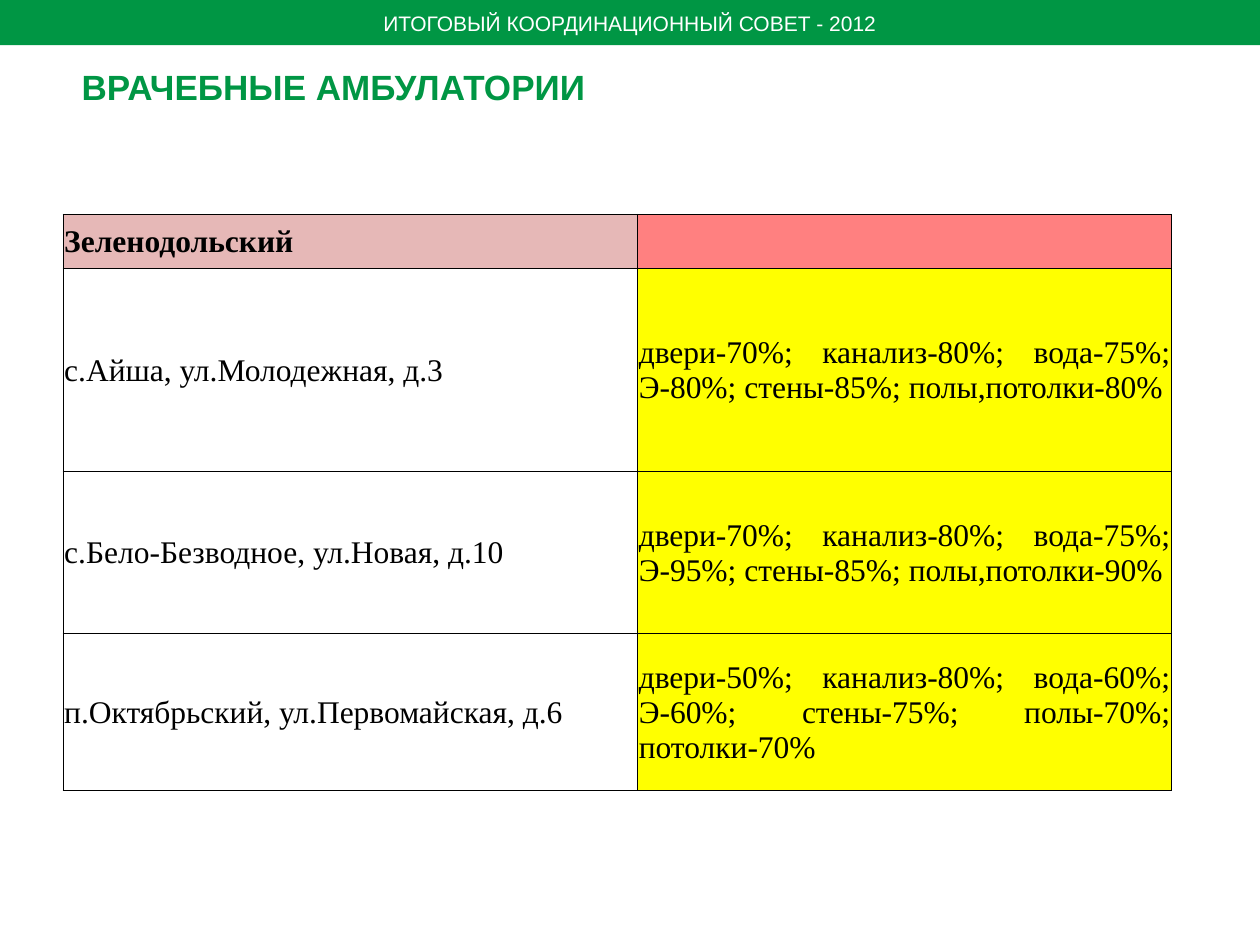
from lxml import etree
from pptx import Presentation
from pptx.dml.color import RGBColor
from pptx.enum.shapes import MSO_SHAPE
from pptx.enum.text import MSO_ANCHOR, PP_ALIGN
from pptx.oxml.ns import qn
from pptx.util import Inches, Pt

RECTANGLE = MSO_SHAPE.RECTANGLE
MIDDLE = MSO_ANCHOR.MIDDLE
CENTER, JUSTIFY, LEFT = PP_ALIGN.CENTER, PP_ALIGN.JUSTIFY, PP_ALIGN.LEFT

BANNER = "ИТОГОВЫЙ КООРДИНАЦИОННЫЙ СОВЕТ - 2012"
HEADING = "ВРАЧЕБНЫЕ АМБУЛАТОРИИ"
CLINICS = [
    ("Зеленодольский", ""),
    ("с.Айша, ул.Молодежная, д.3",
     "двери-70%; канализ-80%; вода-75%; Э-80%; стены-85%; полы,потолки-80%"),
    ("с.Бело-Безводное, ул.Новая, д.10",
     "двери-70%; канализ-80%; вода-75%; Э-95%; стены-85%; полы,потолки-90%"),
    ("п.Октябрьский, ул.Первомайская, д.6",
     "двери-50%; канализ-80%; вода-60%; Э-60%; стены-75%; полы-70%; потолки-70%"),
]
COLORS = {
    "green": "009644", "white": "FFFFFF", "black": "000000",
    "district": "E6B8B7", "district_wear": "FF8080", "wear": "FFFF00",
}
HEADER_FILLS = ("district", "district_wear")
BODY_FILLS = (None, "wear")

SLIDE_W, SLIDE_H = 10, 7.5
COLUMN_WIDTHS = (4.56, 4.24)
ROW_HEIGHTS = (0.43, 1.61, 1.29, 1.24)
TABLE_LEFT, TABLE_TOP = 0.5, 1.7
CELL_MARGIN = Inches(0.01)
BORDER = Pt(0.5)


def rgb(name):
    return RGBColor.from_string(COLORS[name])


def write(frame, text, font, size, color, bold=False, align=LEFT):
    paragraph = frame.paragraphs[0]
    paragraph.text = text
    paragraph.alignment = align
    paragraph.font.name = font
    paragraph.font.size = Pt(size)
    paragraph.font.bold = bold
    paragraph.font.color.rgb = rgb(color)


def add_borders(cell):
    """Draw all four sides; border elements must precede the cell fill."""
    properties = cell._tc.get_or_add_tcPr()
    for position, side in enumerate(("a:lnL", "a:lnR", "a:lnT", "a:lnB")):
        line = etree.Element(qn(side), w=str(BORDER))
        fill = etree.SubElement(line, qn("a:solidFill"))
        etree.SubElement(fill, qn("a:srgbClr"), val=COLORS["black"])
        properties.insert(position, line)


def add_banner(slide):
    banner = slide.shapes.add_shape(RECTANGLE, 0, 0, Inches(SLIDE_W), Inches(0.36))
    banner.shadow.inherit = False
    banner.fill.solid()
    banner.fill.fore_color.rgb = rgb("green")
    banner.line.fill.background()
    banner.text_frame.word_wrap = False
    banner.text_frame.vertical_anchor = MIDDLE
    write(banner.text_frame, BANNER, "Arial", 12, "white", align=CENTER)


def add_clinics(slide):
    table = slide.shapes.add_table(
        len(CLINICS), len(COLUMN_WIDTHS), Inches(TABLE_LEFT), Inches(TABLE_TOP),
        Inches(sum(COLUMN_WIDTHS)), Inches(sum(ROW_HEIGHTS))).table
    table.horz_banding = False
    for column, width in zip(table.columns, COLUMN_WIDTHS):
        column.width = Inches(width)
    for r, (row, height, texts) in enumerate(zip(table.rows, ROW_HEIGHTS, CLINICS)):
        row.height = Inches(height)
        fills = BODY_FILLS if r else HEADER_FILLS
        for cell, text, fill in zip(row.cells, texts, fills):
            cell.vertical_anchor = MIDDLE
            cell.margin_left = cell.margin_right = cell.margin_top = CELL_MARGIN
            cell.margin_bottom = 0
            if fill:
                cell.fill.solid()
                cell.fill.fore_color.rgb = rgb(fill)
            else:
                cell.fill.background()
            add_borders(cell)
            write(cell.text_frame, text, "Times New Roman", 18, "black",
                  bold=r == 0, align=JUSTIFY)


def add_heading(slide):
    heading = slide.shapes.add_textbox(
        Inches(0.55), Inches(0.47), Inches(9.01), Inches(1.16))
    heading.text_frame.word_wrap = True
    write(heading.text_frame, HEADING, "Arial", 20, "green", bold=True)


def main():
    deck = Presentation()
    deck.slide_width, deck.slide_height = Inches(SLIDE_W), Inches(SLIDE_H)
    slide = deck.slides.add_slide(deck.slide_layouts[6])
    add_banner(slide)
    add_clinics(slide)
    add_heading(slide)
    deck.save("out.pptx")


if __name__ == "__main__":
    main()
